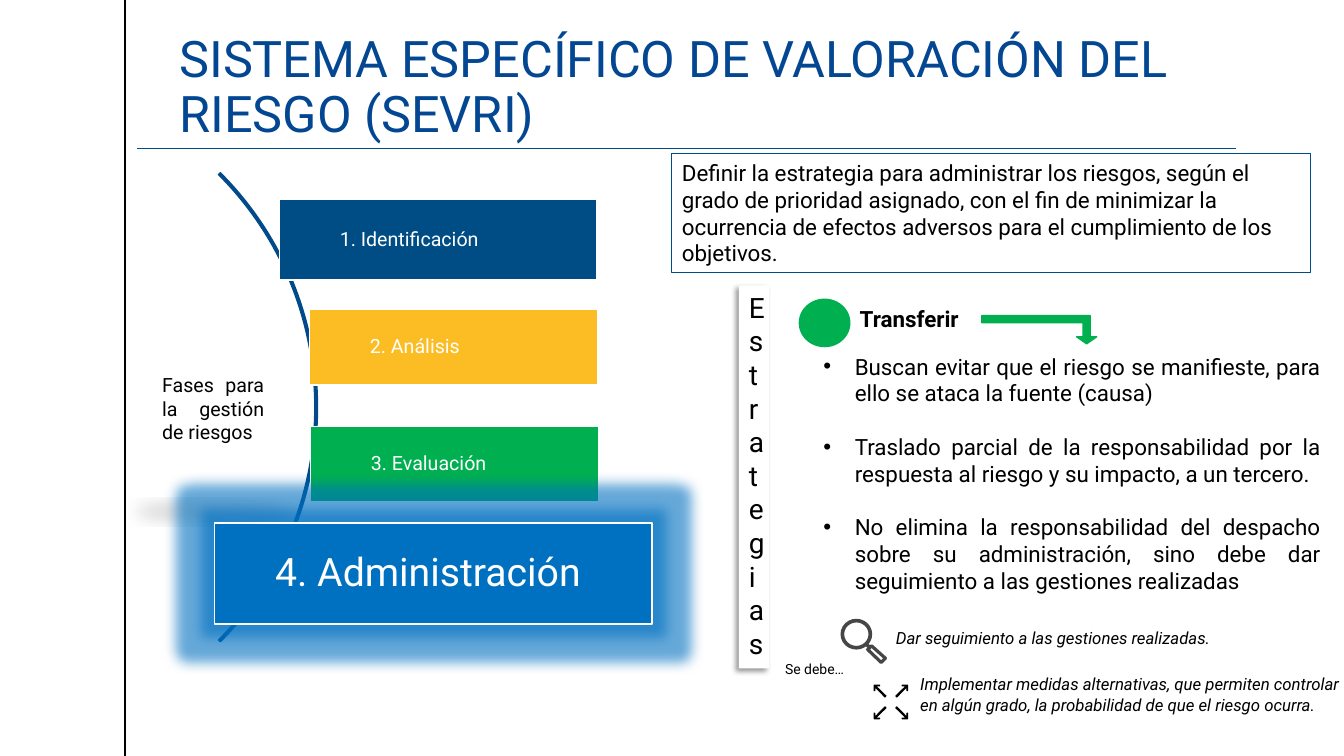
from lxml import etree
from pptx import Presentation
from pptx import util as u
from pptx.dml.color import RGBColor
from pptx.enum import shapes, text
from pptx.oxml import ns

NAVY = RGBColor(0x00, 0x4D, 0x86)
TITLE_BLUE = RGBColor(0x03, 0x47, 0x93)
BLUE = RGBColor(0x00, 0x70, 0xC0)
YELLOW = RGBColor(0xFC, 0xBD, 0x24)
GREEN = RGBColor(0x00, 0xB0, 0x50)
GREY = RGBColor(0x46, 0x46, 0x46)
BLACK = RGBColor(0, 0, 0)
WHITE = RGBColor(0xFF, 0xFF, 0xFF)

SHAPE = shapes.MSO_SHAPE
ALIGN = text.PP_ALIGN
ANCHOR = text.MSO_ANCHOR


def add_child(parent, tag, **attributes):
    child = etree.SubElement(parent, ns.qn(tag))
    for name, value in attributes.items():
        child.set(name, str(value))
    return child


def write(shape, *lines, size=16, color=BLACK, bold=False, italic=False, align=ALIGN.LEFT,
          anchor=ANCHOR.TOP, insets=(7.2, 3.6, 7.2, 3.6), spacing=None, gap=0, bullet=None):
    """Fill a shape with one paragraph per line; gap is the space between paragraphs."""
    frame = shape.text_frame
    frame.word_wrap = True
    frame.vertical_anchor = anchor
    (frame.margin_left, frame.margin_top,
     frame.margin_right, frame.margin_bottom) = map(u.Pt, insets)
    for index, line in enumerate(lines):
        paragraph = frame.add_paragraph() if index else frame.paragraphs[0]
        paragraph.alignment = align
        if spacing:
            paragraph.line_spacing = spacing
        if index and gap:
            paragraph.space_before = u.Pt(gap)
        if bullet:
            properties = paragraph._p.get_or_add_pPr()
            properties.set("marL", str(u.Pt(22.5)))
            properties.set("indent", str(-u.Pt(22.5)))
            add_child(properties, "a:buFont", typeface="Arial")
            add_child(properties, "a:buChar", char=bullet)
        run = paragraph.add_run()
        run.text = line
        run.font.name = "Roboto"
        run.font.size = u.Pt(size)
        run.font.bold, run.font.italic = bold, italic
        run.font.color.rgb = color


class SlideBuilder:
    def __init__(self, slide):
        self.slide = slide

    def paint(self, shape, fill, line, width):
        shape.shadow.inherit = False
        if fill is None:
            shape.fill.background()
        else:
            shape.fill.solid()
            shape.fill.fore_color.rgb = fill
        if line is None:
            shape.line.fill.background()
        else:
            shape.line.color.rgb = line
            shape.line.width = u.Pt(width)
        return shape

    def shape(self, kind, box, fill=None, line=None, width=1, adjustments=()):
        shape = self.slide.shapes.add_shape(kind, *map(u.Pt, box))
        for index, value in enumerate(adjustments):
            shape.adjustments[index] = value
        return self.paint(shape, fill, line, width)

    def label(self, box, *lines, **style):
        write(self.slide.shapes.add_textbox(*map(u.Pt, box)), *lines, **style)

    def line(self, start, end, color, width):
        connector = self.slide.shapes.add_connector(
            shapes.MSO_CONNECTOR.STRAIGHT, *map(u.Pt, (*start, *end)))
        connector.line.color.rgb = color
        connector.line.width = u.Pt(width)
        add_child(connector._element.spPr, "a:effectLst")

    def polygon(self, points, fill, line, width):
        corners = [(u.Pt(x), u.Pt(y)) for x, y in points]
        builder = self.slide.shapes.build_freeform(*corners[0])
        builder.add_line_segments(corners[1:], close=True)
        return self.paint(builder.convert_to_shape(), fill, line, width)

    def effect(self, shape, tag, color, alpha, **attributes):
        """Add a shadow or glow; alpha is a percentage."""
        effects = shape._element.spPr.find(ns.qn("a:effectLst"))
        tint = add_child(add_child(effects, tag, **attributes), "a:srgbClr", val=color)
        add_child(tint, "a:alpha", val=alpha * 1000)


def draw_phases(builder):
    caption = builder.shape(SHAPE.OVAL, (90.7, 250.6, 123.1, 82.1), WHITE)
    builder.effect(caption, "a:outerShdw", BLACK, 15, blurRad=u.Pt(12), dist=u.Pt(25),
                   dir=90 * 60000, sx=90000, sy=-19000, rotWithShape=0)
    write(caption, "Fases para la gestión de riesgos", size=14,
          align=ALIGN.JUSTIFY, anchor=ANCHOR.MIDDLE)
    builder.shape(SHAPE.BLOCK_ARC, (-247, 54, 473.8, 473.8), TITLE_BLUE, NAVY,
                  adjustments=(189, 27, 0.004))
    phases = [
        ("1. Identificación", (199.5, 142.5, 226.8, 57.4), NAVY, 14),
        ("2. Análisis", (221, 221, 206, 54), YELLOW, 14),
        ("3. Evaluación", (221.75, 304.6, 206, 54), GREEN, 14),
        ("4. Administración", (153.4, 373.5, 312.5, 72.2), BLUE, 28),
    ]
    for name, box, fill, size in phases:
        phase = builder.shape(SHAPE.RECTANGLE, box, fill, WHITE)
        write(phase, name, size=size, color=WHITE, anchor=ANCHOR.MIDDLE,
              insets=(43.2, 3, 3, 3), spacing=0.9)
    builder.effect(phase, "a:glow", BLUE, 60, rad=u.Pt(18))


def draw_strategy(builder):
    definition = builder.shape(SHAPE.RECTANGLE, (480, 109.4, 456, 85), None, NAVY, 0.75)
    write(definition, "Definir la estrategia para administrar los riesgos, según el grado de "
          "prioridad asignado, con el fin de minimizar la ocurrencia de efectos adversos para "
          "el cumplimiento de los objetivos.", anchor=ANCHOR.MIDDLE)
    strip = builder.shape(SHAPE.RECTANGLE, (527.8, 203.8, 21.6, 273.6), WHITE)
    builder.effect(strip, "a:outerShdw", BLACK, 40, blurRad=u.Pt(4), dist=u.Pt(3),
                   dir=135 * 60000, rotWithShape=0)
    write(strip, "Estrategias", size=20)
    builder.shape(SHAPE.OVAL, (571, 213.8, 36, 33.8), GREEN, GREEN)
    builder.label((607, 214.6, 99.4, 26.6), "Transferir", bold=True)
    builder.label((581, 248.4, 369.4, 181.4),
                  "Buscan evitar que el riesgo se manifieste, para ello se ataca la fuente (causa)",
                  "Traslado parcial de la responsabilidad por la respuesta al riesgo y su impacto, "
                  "a un tercero.",
                  "No elimina la responsabilidad del despacho sobre su administración, sino debe "
                  "dar seguimiento a las gestiones realizadas",
                  align=ALIGN.JUSTIFY, gap=19, bullet="•")
    arrow = builder.shape(SHAPE.BENT_UP_ARROW, (701.3, 225.4, 82.1, 20.2), GREEN, GREEN,
                          adjustments=(0.25, 0.354, 0.25))
    arrow._element.spPr.xfrm.set("flipV", "1")


def draw_actions(builder):
    builder.label((632.9, 445, 325, 21.8), "Dar seguimiento a las gestiones realizadas.",
                  size=12, italic=True)
    builder.label((553.7, 468, 106.6, 19.4), "Se debe…", size=10)
    builder.label((650.2, 478, 329, 51), "Implementar medidas alternativas, que permiten "
                  "controlar en algún grado, la probabilidad de que el riesgo ocurra.",
                  size=12, italic=True)
    # Magnifying glass: lens, neck and handle
    builder.shape(SHAPE.OVAL, (601.7, 443.3, 20, 19.4), None, GREY, 2.6)
    builder.line((618.6, 460), (621.8, 463), GREY, 2.6)
    builder.polygon([(619.8, 464), (622.6, 461.4), (632.4, 470.2), (629.4, 473.2)],
                    None, GREY, 2.3)
    # Four arrows pointing out from a common centre
    center_x, center_y = 636.4, 501.4
    arrow = [(12, 12), (8, 12), (8, 11.5), (11, 11.5), (3.5, 4.25),
             (4.25, 3.5), (11.5, 11), (11.5, 8), (12, 8)]
    for side_x in (-1, 1):
        for side_y in (-1, 1):
            builder.polygon([(center_x + side_x * x, center_y + side_y * y) for x, y in arrow],
                            BLACK, BLACK, 0.75)


def main():
    presentation = Presentation()
    presentation.slide_width, presentation.slide_height = u.Pt(960), u.Pt(540)
    builder = SlideBuilder(presentation.slides.add_slide(presentation.slide_layouts[6]))
    builder.line((89.3, 0), (89.3, 540), BLACK, 1)
    builder.label((128.2, 26.6, 797.8, 79.2),
                  "SISTEMA ESPECÍFICO DE VALORACIÓN DEL RIESGO (SEVRI)", size=36,
                  color=TITLE_BLUE, anchor=ANCHOR.BOTTOM, insets=(0, 3.6, 0, 3.6), spacing=0.9)
    builder.line((97.9, 105.8), (882.7, 105.8), NAVY, 0.5)
    draw_phases(builder)
    draw_strategy(builder)
    draw_actions(builder)
    presentation.save("out.pptx")


if __name__ == "__main__":
    main()
